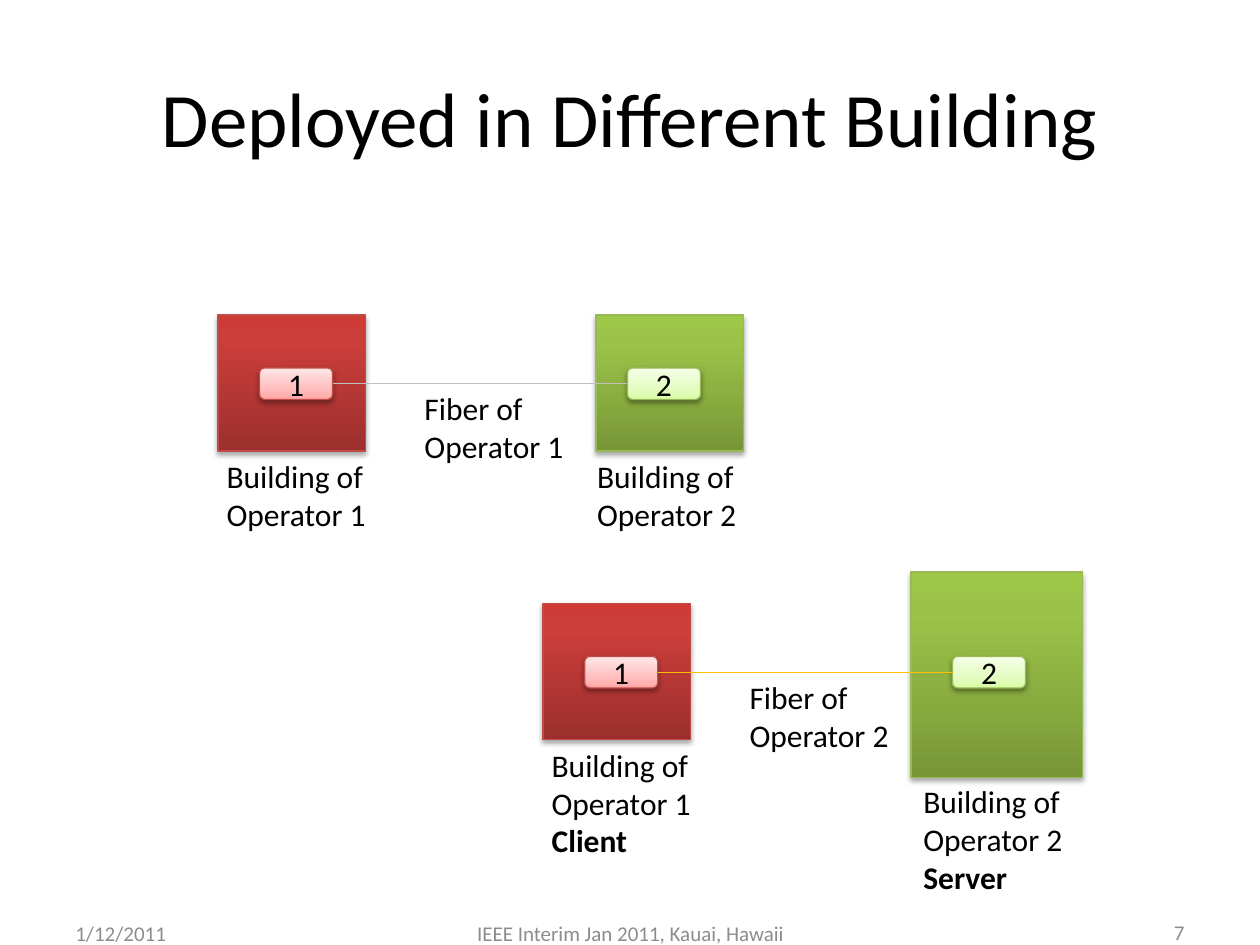
from dataclasses import dataclass

from pptx import Presentation
from pptx import oxml
from pptx import util as u
from pptx.dml import color
from pptx.enum import shapes, text
from pptx.oxml import ns


@dataclass(frozen=True)
class Theme:
    """Colours, gradients and type sizes of the slide."""
    font: str = "Calibri"
    title_size: int = 44
    body_size: int = 18
    footer_size: int = 12
    ink: str = "000000"
    muted: str = "8C8C8C"
    red_line: str = "BF4C48"
    green_line: str = "98B955"
    fiber_1: str = "BFBFBF"
    fiber_2: str = "FFC000"
    line_width: float = 0.75
    red_building: tuple = ((0, "9C2F2D"), (80, "CB3E3A"), (100, "CE3B37"))
    green_building: tuple = ((0, "779737"), (80, "9BC348"), (100, "9DC746"))
    red_node: tuple = ((0, "FFA6A5"), (35, "FFC0BF"), (100, "FFE7E7"))
    green_node: tuple = ((0, "DAFDA7"), (35, "E4FCC2"), (100, "F5FFE7"))


THEME = Theme()
NODE_SIZE = (0.58, 0.25)


def rgb(value):
    """Turn a hex string into a colour."""
    return color.RGBColor.from_string(value)


def inches(values):
    """Turn a sequence of numbers into lengths."""
    return [u.Inches(value) for value in values]


def write(frame, lines, size=THEME.body_size, ink=THEME.ink, align=text.PP_ALIGN.LEFT,
          anchor=text.MSO_ANCHOR.TOP, wrap=True, bold_lines=()):
    """Fill a text frame with one paragraph for each line."""
    frame.word_wrap = wrap
    frame.vertical_anchor = anchor
    if not wrap:
        frame.auto_size = text.MSO_AUTO_SIZE.SHAPE_TO_FIT_TEXT
    for index, line in enumerate(lines):
        paragraph = frame.paragraphs[0] if index == 0 else frame.add_paragraph()
        paragraph.alignment = align
        run = paragraph.add_run()
        run.text = line
        run.font.name = THEME.font
        run.font.size = u.Pt(size)
        run.font.color.rgb = rgb(ink)
        if line in bold_lines:
            run.font.bold = True


def add_label(slide, box, *lines, **style):
    """Add a text box."""
    label = slide.shapes.add_textbox(*inches(box))
    write(label.text_frame, lines, **style)


def add_block(slide, preset, box, stops, outline, shadow_alpha, shadow_distance):
    """Add a shape with a vertical gradient and a soft shadow below it."""
    block = slide.shapes.add_shape(preset, *inches(box))
    block.fill.gradient()
    block.fill.gradient_angle = 90
    stop_list = block._element.spPr.find(".//" + ns.qn("a:gsLst"))
    for old_stop in list(stop_list):
        stop_list.remove(old_stop)
    for position, value in stops:
        stop_list.append(oxml.parse_xml(
            f'<a:gs {ns.nsdecls("a")} pos="{position * 1000}"><a:srgbClr val="{value}"/></a:gs>'))
    block.line.color.rgb = rgb(outline)
    block.line.width = u.Pt(THEME.line_width)
    block.shadow.inherit = False
    block._element.spPr.find(ns.qn("a:effectLst")).append(oxml.parse_xml(
        f'<a:outerShdw {ns.nsdecls("a")} blurRad="{u.Pt(3.1)}" dist="{u.Pt(shadow_distance)}" '
        f'dir="5400000" rotWithShape="0"><a:srgbClr val="000000">'
        f'<a:alpha val="{shadow_alpha * 1000}"/></a:srgbClr></a:outerShdw>'))
    return block


def add_building(slide, box, stops, outline):
    """Add a building."""
    add_block(slide, shapes.MSO_SHAPE.RECTANGLE, box, stops, outline, 35, 1.8)


def add_node(slide, left, top, number, stops, outline):
    """Add a numbered network node."""
    node = add_block(slide, shapes.MSO_SHAPE.ROUNDED_RECTANGLE, (left, top, *NODE_SIZE),
                     stops, outline, 38, 1.6)
    write(node.text_frame, [number], align=text.PP_ALIGN.CENTER, anchor=text.MSO_ANCHOR.MIDDLE)


def add_fiber(slide, start, end, ink):
    """Add the fiber between two nodes."""
    fiber = slide.shapes.add_connector(shapes.MSO_CONNECTOR.STRAIGHT, *inches(start + end))
    fiber.line.color.rgb = rgb(ink)
    fiber.line.width = u.Pt(THEME.line_width)
    fiber._element.spPr.append(oxml.parse_xml(f'<a:effectLst {ns.nsdecls("a")}/>'))


def add_link(slide, left, top, server_building, server_label, fiber_owner, fiber_ink, roles=()):
    """Add two buildings, their nodes, the fiber and the captions."""
    client_role, server_role = roles[:1], roles[1:]
    node_1, node_2, node_top = left + 0.33, left + 3.25, top + 0.42
    fiber_y = node_top + NODE_SIZE[1] / 2
    label_height = 1.01 if roles else 0.71
    add_building(slide, server_building, THEME.green_building, THEME.green_line)
    add_building(slide, (left, top, 1.17, 1.08), THEME.red_building, THEME.red_line)
    add_node(slide, node_2, node_top, "2", THEME.green_node, THEME.green_line)
    add_label(slide, (left + 1.54, top + 0.54, 1.32, 0.71),
              "Fiber of", f"Operator {fiber_owner}", wrap=False)
    add_node(slide, node_1, node_top, "1", THEME.red_node, THEME.red_line)
    add_fiber(slide, (node_1 + NODE_SIZE[0], fiber_y), (node_2, fiber_y), fiber_ink)
    captions = (((left - 0.03, top + 1.08), "Operator 1", client_role),
                (server_label, "Operator 2", server_role))
    for corner, operator, role in captions:
        add_label(slide, (*corner, 1.36, label_height), "Building of", operator, *role,
                  wrap=False, bold_lines=role)


def add_footer(slide):
    """Add the date, the meeting and the slide number."""
    parts = (((0.5, 7.21, 2.33, 0.4), "1/12/2011", text.PP_ALIGN.LEFT),
             ((3.42, 7.21, 3.17, 0.4), "IEEE Interim Jan 2011, Kauai, Hawaii", text.PP_ALIGN.CENTER),
             ((7.17, 7.2, 2.33, 0.4), "7", text.PP_ALIGN.RIGHT))
    for box, words, align in parts:
        add_label(slide, box, words, size=THEME.footer_size, ink=THEME.muted, align=align,
                  anchor=text.MSO_ANCHOR.MIDDLE)


def main():
    """Build and save the slide."""
    deck = Presentation()
    deck.slide_width, deck.slide_height = inches((10, 7.5))
    slide = deck.slides.add_slide(deck.slide_layouts[6])
    add_label(slide, (0.5, 0.3, 9, 1.25), "Deployed in Different Building",
              size=THEME.title_size, align=text.PP_ALIGN.CENTER, anchor=text.MSO_ANCHOR.MIDDLE)
    add_link(slide, 1.73, 2.5, (4.73, 2.5, 1.17, 1.08), (4.64, 3.58), 1, THEME.fiber_1)
    add_link(slide, 4.31, 4.79, (7.23, 4.54, 1.36, 1.63), (7.23, 6.16), 2, THEME.fiber_2,
             roles=("Client", "Server"))
    add_footer(slide)
    deck.save("out.pptx")


if __name__ == "__main__":
    main()
